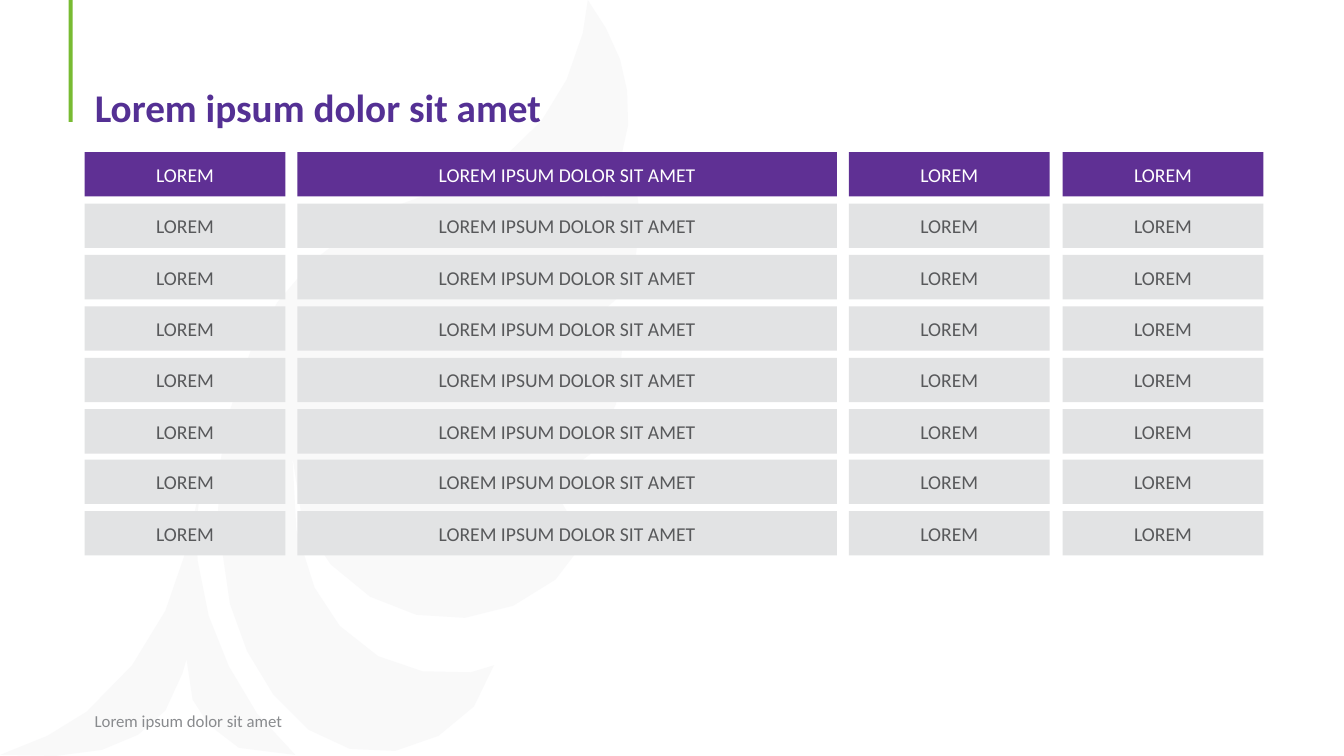
from dataclasses import dataclass

from lxml.etree import SubElement
from pptx import Presentation
from pptx.dml.color import RGBColor
from pptx.enum.shapes import MSO_SHAPE as Shape
from pptx.enum.text import MSO_ANCHOR as Anchor, MSO_AUTO_SIZE as AutoSize, PP_ALIGN as Align
from pptx.oxml.ns import qn
from pptx.util import Pt

PX = 9144  # one px is a hundredth of an inch


@dataclass(frozen=True)
class Theme:
    font: str = "Calibri"
    accent: str = "78BB32"
    leaf: str = "E1E2E4"
    title: str = "543094"
    header: str = "5F3094"
    header_text: str = "FFFFFF"
    body: str = "E2E3E4"
    body_text: str = "58595B"
    footer: str = "898B8E"
    title_size: int = 28
    cell_size: int = 14
    footer_size: int = 12


class SlideBuilder:
    def __init__(self, slide, theme):
        self.slide, self.theme = slide, theme

    def put_text(self, frame, text, size, color, bold=False, align=Align.LEFT,
                 anchor=Anchor.MIDDLE):
        frame.word_wrap = True
        frame.auto_size = AutoSize.NONE
        frame.vertical_anchor = anchor
        paragraph = frame.paragraphs[0]
        paragraph.alignment = align
        run = paragraph.add_run()
        run.text = text
        run.font.name = self.theme.font
        run.font.size = Pt(size)
        run.font.bold = bold
        run.font.color.rgb = RGBColor.from_string(color)
        return paragraph

    def paint(self, shape, color):
        shape.shadow.inherit = False
        shape.fill.solid()
        shape.fill.fore_color.rgb = RGBColor.from_string(color)
        shape.line.fill.background()
        return shape

    def bar(self, left, top, width, height, color):
        box = (n * PX for n in (left, top, width, height))
        return self.paint(self.slide.shapes.add_shape(Shape.RECTANGLE, *box), color)

    def cell(self, left, top, width, height, text, fill, color):
        frame = self.bar(left, top, width, height, fill).text_frame
        frame.margin_left = frame.margin_right = 4 * PX
        frame.margin_top = frame.margin_bottom = 4 * PX
        self.put_text(frame, text, self.theme.cell_size, color, align=Align.CENTER)

    def silhouette(self, outlines, color, opacity):
        first, *others = outlines
        builder = self.slide.shapes.build_freeform(*first[0], scale=PX)
        builder.add_line_segments(first[1:])
        for outline in others:
            builder.move_to(*outline[0])
            builder.add_line_segments(outline[1:])
        shape = self.paint(builder.convert_to_shape(), color)
        tint = shape.element.spPr.find(qn("a:solidFill"))[0]
        SubElement(tint, qn("a:alpha"), val=str(opacity * 1000))

    def title(self, left, top, width, height, text):
        title = self.slide.shapes.title
        title.left, title.top, title.width, title.height = (
            n * PX for n in (left, top, width, height))
        # Bring the title in front of the background
        title.element.getparent().append(title.element)
        paragraph = self.put_text(title.text_frame, text, self.theme.title_size,
                                  self.theme.title, bold=True, anchor=Anchor.BOTTOM)
        paragraph.line_spacing = 0.9

    def footer(self, left, top, width, height, text):
        box = self.slide.shapes.add_textbox(*(n * PX for n in (left, top, width, height)))
        self.put_text(box.text_frame, text, self.theme.footer_size, self.theme.footer)


# Plain leaf and stem behind the content
LEAF = [
    (583, 0), (601, 28), (615, 59), (622, 90), (623, 124), (616, 156), (597, 196),
    (631, 185), (635, 217), (630, 259), (611, 297), (571, 333), (617, 347),
    (611, 401), (585, 451), (546, 480), (580, 537), (551, 575), (509, 601),
    (461, 613), (413, 610), (367, 592), (328, 560), (300, 518), (290, 453),
    (294, 526), (312, 583), (337, 621), (375, 651), (419, 666), (467, 667),
    (490, 660), (470, 701), (435, 730), (392, 745), (347, 743), (306, 724),
    (271, 689), (245, 646), (228, 599), (216, 516), (218, 461), (228, 407),
    (249, 347), (275, 300), (309, 260), (350, 228), (396, 203), (461, 180),
    (502, 154), (537, 120), (562, 79), (578, 33), (583, 0),
]
STEM = [
    (199, 481), (185, 545), (164, 606), (131, 660), (86, 706), (47, 730), (0, 749),
    (55, 750), (101, 744), (137, 729), (164, 705), (181, 668), (185, 654),
    (191, 694), (207, 719), (237, 742), (293, 749), (255, 708), (227, 661),
    (207, 611), (196, 556), (195, 519), (199, 481),
]

# Grid: (left, width, text) for each column
COLUMNS = [
    (84, 199, "LOREM"),
    (295, 535, "LOREM IPSUM DOLOR SIT AMET"),
    (842, 199, "LOREM"),
    (1054, 199, "LOREM"),
]
ROW_COUNT, GRID_TOP, ROW_HEIGHT, ROW_PITCH = 8, 151, 44, 50.9


def main():
    deck = Presentation()
    deck.slide_width, deck.slide_height = 1333 * PX, 750 * PX
    theme = Theme()
    page = SlideBuilder(deck.slides.add_slide(deck.slide_layouts[5]), theme)

    # Background and headings
    page.bar(68, 0, 4, 121, theme.accent)
    page.silhouette([LEAF, STEM], theme.leaf, opacity=20)
    page.title(84, 41, 1198, 94, "Lorem ipsum dolor sit amet")
    page.footer(84, 695, 1059, 40, "Lorem ipsum dolor sit amet")

    # Header row, then body rows
    for row in range(ROW_COUNT):
        top = round(GRID_TOP + row * ROW_PITCH)
        colors = (theme.body, theme.body_text) if row else (theme.header, theme.header_text)
        for left, width, text in COLUMNS:
            page.cell(left, top, width, ROW_HEIGHT, text, *colors)

    deck.save("out.pptx")


if __name__ == "__main__":
    main()
